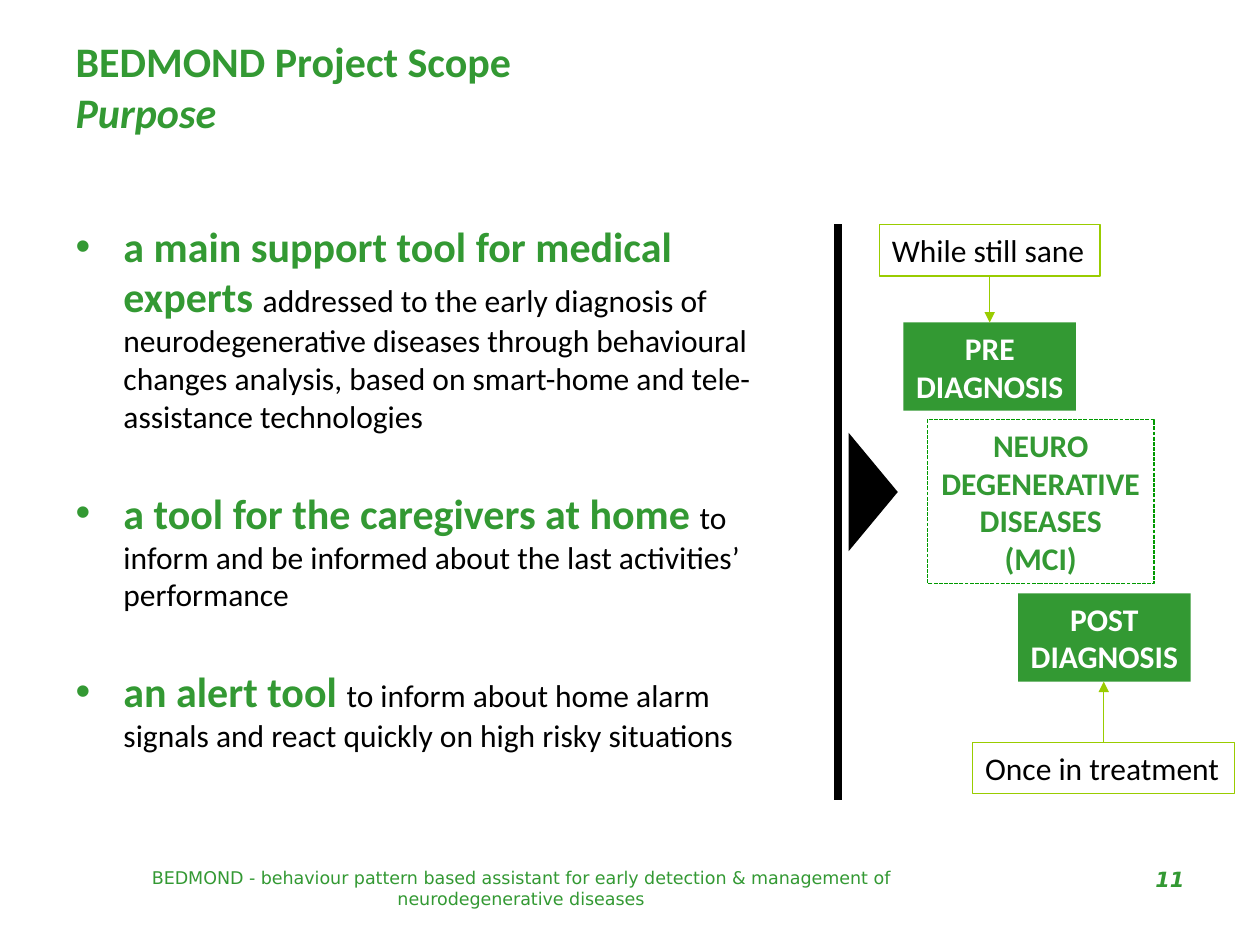
"""Build the BEDMOND project purpose slide."""
import pptx
import pptx.dml.color
import pptx.enum.dml
import pptx.enum.shapes
import pptx.enum.text
import pptx.oxml
import pptx.oxml.ns
import pptx.util
from lxml import etree

COLORS = {"green": "339933", "dash": "009900", "lime": "99CC00",
          "black": "000000", "white": "FFFFFF"}
TITLE = ["BEDMOND Project Scope", "Purpose"]
BULLETS = [
    ("a main support tool for medical experts ",
     "addressed to the early diagnosis of neurodegenerative diseases through behavioural "
     "changes analysis, based on smart-home and tele-assistance technologies"),
    ("a tool for the caregivers at home ",
     "to inform and be informed about the last activities’ performance"),
    ("an alert tool ",
     "to inform about home alarm signals and react quickly on high risky situations"),
]
FOOTER = "BEDMOND - behaviour pattern based assistant for early detection & management of neurodegenerative diseases"
PAGE = "11"
STAGE = {"fill": "green", "color": "white", "bold": True}
DISEASE = {"line": "dash", "dashed": True, "color": "green", "bold": True}
NOTE = {"line": "lime", "align": "LEFT"}
BOXES = {
    "before": (["While still sane"], (6.98, 1.78, 1.75, 0.41), NOTE),
    "pre": (["PRE", "DIAGNOSIS"], (7.17, 2.56, 1.37, 0.7), STAGE),
    "disease": (["NEURO", "DEGENERATIVE", "DISEASES", "(MCI)"], (7.36, 3.33, 1.8, 1.3), DISEASE),
    "post": (["POST", "DIAGNOSIS"], (8.08, 4.71, 1.37, 0.7), STAGE),
    "after": (["Once in treatment"], (7.72, 5.89, 2.08, 0.41), NOTE),
}


def rgb(name):
    return pptx.dml.color.RGBColor.from_string(COLORS[name])


def inches(lengths):
    return [pptx.util.Inches(length) for length in lengths]


def add_text(paragraph, text, size=18, font="Calibri", color="black", bold=False, italic=False, align=None):
    run = paragraph.add_run()
    run.text = text
    run.font.size = pptx.util.Pt(size)
    run.font.name = font
    run.font.bold = bold
    run.font.italic = italic
    run.font.color.rgb = rgb(color)
    if align:
        paragraph.alignment = pptx.enum.text.PP_ALIGN[align]


def place(shape, area):
    shape.left, shape.top, shape.width, shape.height = inches(area)
    shape.text_frame.word_wrap = True
    shape.text_frame.auto_size = pptx.enum.text.MSO_AUTO_SIZE.NONE


def add_shape(slide, kind, area, fill=None, line=None, dashed=False):
    shape = slide.shapes.add_shape(pptx.enum.shapes.MSO_SHAPE[kind], *inches(area))
    shape.shadow.inherit = False
    if fill:
        shape.fill.solid()
        shape.fill.fore_color.rgb = rgb(fill)
    else:
        shape.fill.background()
    if line:
        shape.line.color.rgb = rgb(line)
        shape.line.width = pptx.util.Pt(0.75)
        if dashed:
            shape.line.dash_style = pptx.enum.dml.MSO_LINE.SQUARE_DOT
    else:
        shape.line.fill.background()
    return shape


def add_box(slide, lines, area, fill=None, line=None, dashed=False, align="CENTER", **style):
    frame = add_shape(slide, "RECTANGLE", area, fill, line, dashed).text_frame
    frame.word_wrap = False
    for index, text in enumerate(lines):
        paragraph = frame.add_paragraph() if index else frame.paragraphs[0]
        add_text(paragraph, text, align=align, **style)


def add_line(slide, start, end, color, width, arrow=False):
    connector = slide.shapes.add_connector(
        pptx.enum.shapes.MSO_CONNECTOR.STRAIGHT, *inches(start + end))
    connector.line.color.rgb = rgb(color)
    connector.line.width = pptx.util.Pt(width)
    if arrow:
        etree.SubElement(connector.line._get_or_add_ln(), pptx.oxml.ns.qn("a:tailEnd"), type="triangle")
    etree.SubElement(connector._element.spPr, pptx.oxml.ns.qn("a:effectLst"))


def add_bullet(paragraph):
    properties = paragraph._p.get_or_add_pPr()
    properties.set("marL", str(pptx.util.Inches(0.38)))
    properties.set("indent", str(-pptx.util.Inches(0.38)))
    color = etree.SubElement(properties, pptx.oxml.ns.qn("a:buClr"))
    etree.SubElement(color, pptx.oxml.ns.qn("a:srgbClr"), val=COLORS["green"])
    etree.SubElement(properties, pptx.oxml.ns.qn("a:buFont"), typeface="Arial")
    etree.SubElement(properties, pptx.oxml.ns.qn("a:buChar"), char="•")


def add_title(slide):
    title = slide.shapes.title
    place(title, (0.5, 0.3, 5.76, 0.77))
    title.text_frame.vertical_anchor = pptx.enum.text.MSO_ANCHOR.MIDDLE
    paragraph = title.text_frame.paragraphs[0]
    style = {"size": 24, "color": "green", "bold": True, "align": "LEFT"}
    add_text(paragraph, TITLE[0], **style)
    paragraph.add_line_break()
    add_text(paragraph, TITLE[1], italic=True, **style)


def add_bullets(slide):
    body = slide.placeholders[1]
    place(body, (0.5, 1.7, 5.92, 4.72))
    for index, (lead, rest) in enumerate(BULLETS):
        paragraph = body.text_frame.add_paragraph() if index else body.text_frame.paragraphs[0]
        add_bullet(paragraph)
        paragraph.space_before = pptx.util.Pt(30 if index else 0)
        add_text(paragraph, lead, size=24, color="green", bold=True)
        add_text(paragraph, rest)


def add_footer(slide, text, area, **style):
    box = slide.shapes.add_textbox(*inches(area))
    place(box, area)
    add_text(box.text_frame.paragraphs[0], text, font="DejaVu Sans", color="green", **style)


def add_diagram(slide):
    add_line(slide, (6.65, 1.78), (6.65, 6.35), "black", 4.5)
    add_shape(slide, "ISOSCELES_TRIANGLE", (6.46, 3.71, 0.94, 0.39), fill="black").rotation = 90
    for lines, area, style in BOXES.values():
        add_box(slide, lines, area, **style)
    for source, target in (("before", "pre"), ("after", "post")):
        left, top, width, height = BOXES[source][1]
        _, target_top, _, target_height = BOXES[target][1]
        center = left + width / 2
        if top < target_top:
            ends = (top + height, target_top)
        else:
            ends = (top, target_top + target_height)
        add_line(slide, (center, ends[0]), (center, ends[1]), "lime", 0.75, arrow=True)


def main():
    presentation = pptx.Presentation()
    presentation.slide_width, presentation.slide_height = inches((10, 7.5))
    slide = presentation.slides.add_slide(presentation.slide_layouts[1])
    add_title(slide)
    add_bullets(slide)
    add_diagram(slide)
    add_footer(slide, FOOTER, (0.51, 6.83, 7.25, 0.52), size=10, align="CENTER")
    add_footer(slide, PAGE, (8.94, 6.83, 0.56, 0.52), size=12, bold=True, italic=True, align="RIGHT")
    presentation.save("out.pptx")


if __name__ == "__main__":
    main()
